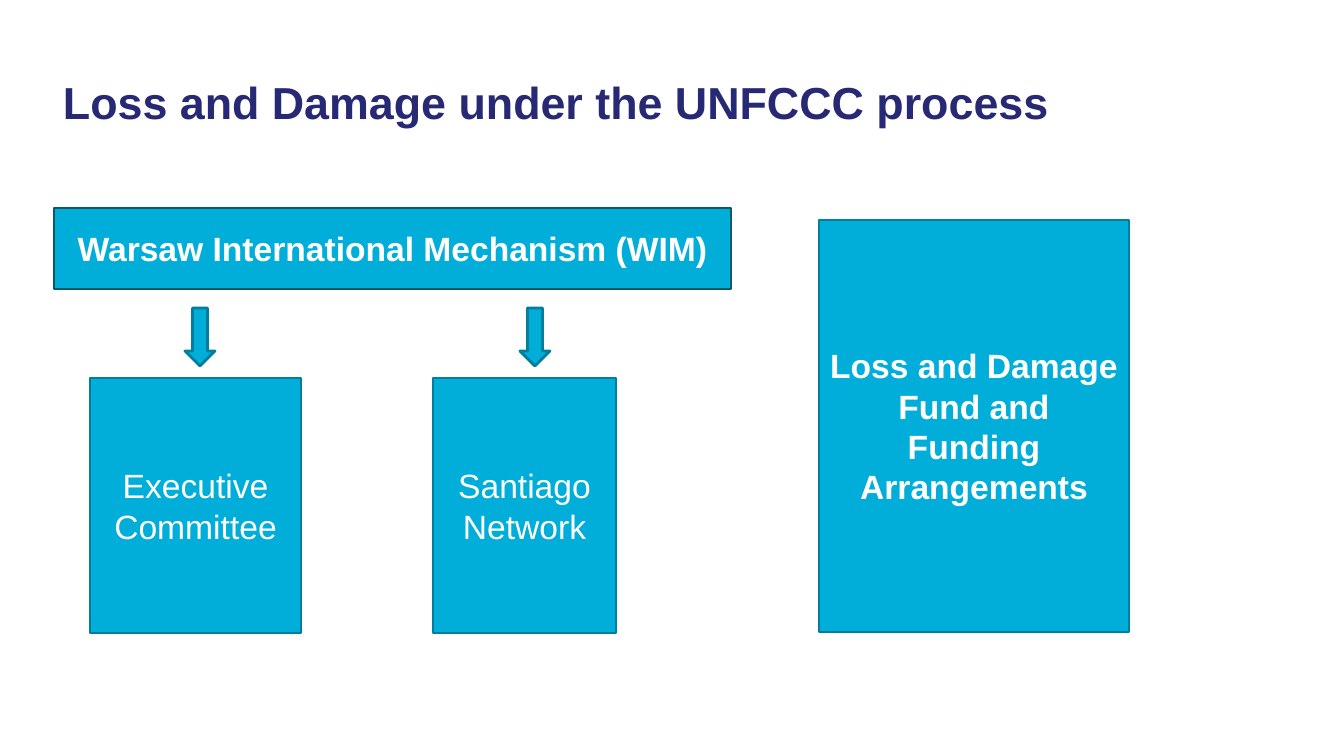
"""Build the slide on loss and damage under the UNFCCC process."""
from pptx import Presentation
from pptx import util as u
from pptx.dml import color
from pptx.enum import shapes, text

PX = 914400 / 100.8
FONT = "Arial"
CYAN, TEAL, DARK_TEAL = "00AED9", "007F9D", "045D64"
WHITE, NAVY = "FFFFFF", "272974"


def px(length):
    """Turn a length in px into EMU."""
    return u.Emu(round(length * PX))


def rgb(value):
    """Turn a hex string into a colour."""
    return color.RGBColor.from_string(value)


def write(shape, words, size, ink, bold):
    """Write one centred run in the middle of a shape."""
    frame = shape.text_frame
    frame.word_wrap = True
    frame.auto_size = text.MSO_AUTO_SIZE.NONE
    frame.vertical_anchor = text.MSO_ANCHOR.MIDDLE
    paragraph = frame.paragraphs[0]
    paragraph.alignment = text.PP_ALIGN.CENTER
    run = paragraph.add_run()
    run.text = words
    run.font.name = FONT
    run.font.size = u.Pt(size)
    run.font.bold = bold
    run.font.color.rgb = rgb(ink)
    return paragraph


def add_title(slide, words, left, top, width, height):
    """Place and fill the title placeholder."""
    title = slide.shapes.title
    title.left, title.top = px(left), px(top)
    title.width, title.height = px(width), px(height)
    write(title, words, 32, NAVY, True).line_spacing = 0.9


def add_block(slide, kind, left, top, width, height, outline=TEAL):
    """Add a cyan preset shape with a thin outline."""
    shape = slide.shapes.add_shape(
        kind, px(left), px(top), px(width), px(height))
    shape.shadow.inherit = False
    shape.fill.solid()
    shape.fill.fore_color.rgb = rgb(CYAN)
    shape.line.color.rgb = rgb(outline)
    shape.line.width = u.Pt(2)
    return shape


def add_box(slide, words, left, top, width, height, bold=False, outline=TEAL):
    """Add a labelled rectangle."""
    box = add_block(slide, shapes.MSO_SHAPE.RECTANGLE,
                    left, top, width, height, outline)
    write(box, words, 24, WHITE, bold)


def main():
    """Build and save the slide."""
    presentation = Presentation()
    presentation.slide_width, presentation.slide_height = px(1344), px(756)
    slide = presentation.slides.add_slide(presentation.slide_layouts[5])
    add_title(slide, "Loss and Damage under the UNFCCC process",
              43, 31, 1027, 148)
    add_box(slide, "Warsaw International Mechanism (WIM)",
            54, 208, 677, 81, bold=True, outline=DARK_TEAL)
    bodies = [("Executive Committee", 90, 211, 185),
              ("Santiago Network", 433, 183, 520)]
    for name, left, width, arrow_left in bodies:
        add_box(slide, name, left, 378, width, 255)
        add_block(slide, shapes.MSO_SHAPE.DOWN_ARROW, arrow_left, 308, 30, 58)
    add_box(slide, "Loss and Damage Fund and Funding Arrangements",
            819, 220, 310, 412, bold=True)
    presentation.save("out.pptx")


if __name__ == "__main__":
    main()
